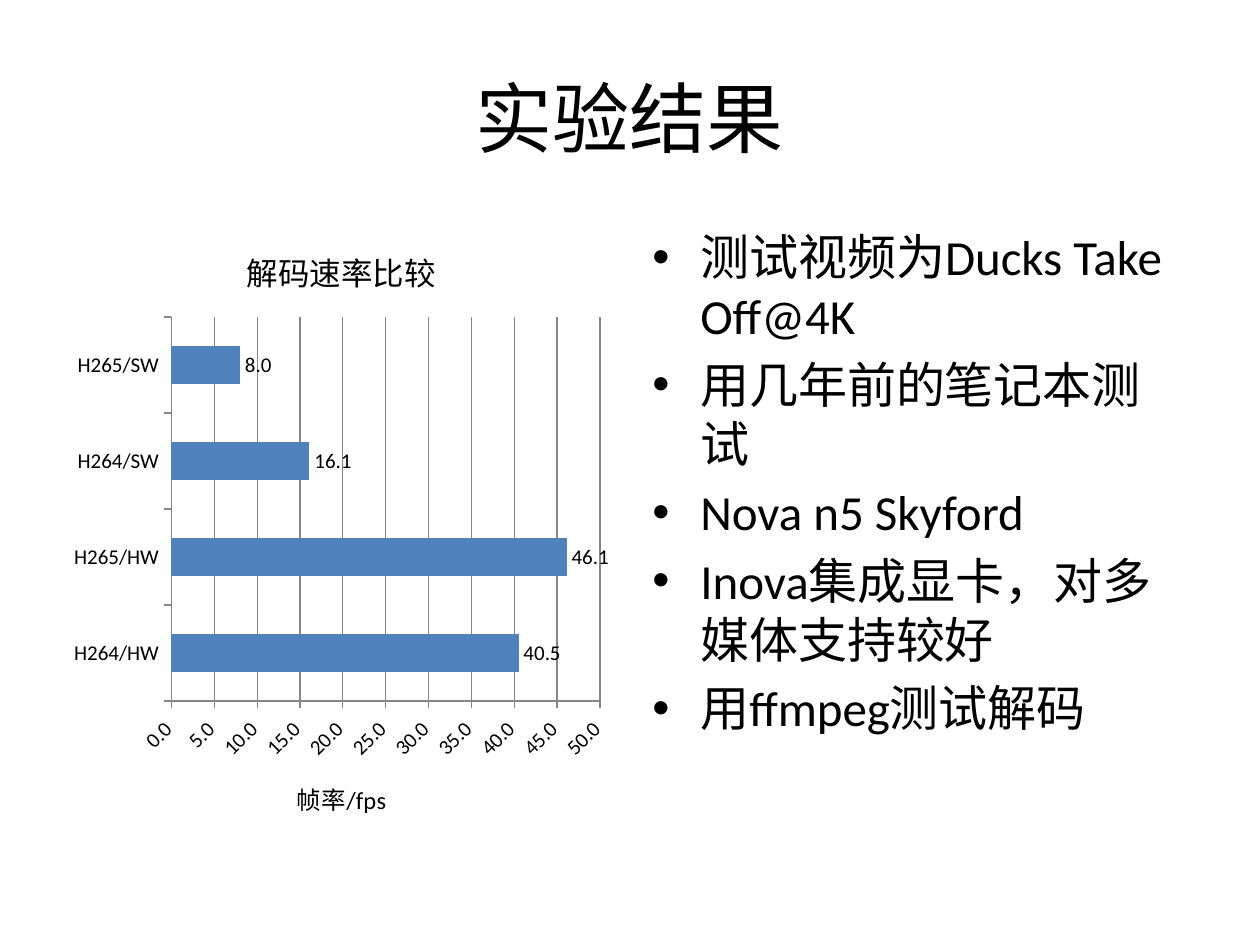
"""Build a slide comparing decoding speeds, with a bar chart and notes on the test."""
from lxml import etree
from pptx import Presentation, util as u
from pptx.chart.data import CategoryChartData
from pptx.dml.color import RGBColor
from pptx.enum import chart as ec, text as et
from pptx.oxml.ns import qn

HEAD = "实验结果"
NOTES = [
    "测试视频为Ducks Take Off@4K",
    "用几年前的笔记本测试",
    "Nova n5 Skyford",
    "Inova集成显卡，对多媒体支持较好",
    "用ffmpeg测试解码",
]
RATES = {"H264/HW": 40.5, "H265/HW": 46.1, "H264/SW": 16.1, "H265/SW": 8.0}
TITLE, UNIT = "解码速率比较", "帧率/fps"

FACE, FORM = "Calibri", "0.0_ "
BLACK = RGBColor(0x00, 0x00, 0x00)
BLUE = RGBColor(0x4F, 0x81, 0xBD)
GREY = RGBColor(0x86, 0x86, 0x86)

WIDE, HIGH = u.Inches(10), u.Inches(7.5)
EDGE = WIDE * 0.05
FULL = WIDE - 2 * EDGE
GAP = u.Inches(0.16)
COL = (FULL - GAP) / 2
TOP, TALL = u.Inches(1.75), HIGH * 0.66
DENT = u.Inches(0.38)


def put(item, **vals):
    for key, val in vals.items():
        setattr(item, key, val)


def style(font, size):
    put(font, name=FACE, size=u.Pt(size), bold=False)
    font.color.rgb = BLACK


def box(slide, rect, lines, size, anchor, **form):
    frame = slide.shapes.add_textbox(*map(int, rect)).text_frame
    put(frame, word_wrap=True, vertical_anchor=anchor)
    for i, line in enumerate(lines):
        para = frame.add_paragraph() if i else frame.paragraphs[0]
        put(para, **form)
        run = para.add_run()
        run.text = line
        style(run.font, size)
    return frame.paragraphs


def bullet(para):
    props = para._p.get_or_add_pPr()
    props.set("marL", str(DENT))
    props.set("indent", str(-DENT))
    etree.SubElement(props, qn("a:buFont")).set("typeface", "Arial")
    etree.SubElement(props, qn("a:buChar")).set("char", "•")


def label(owner, words, size):
    frame = owner.text_frame
    frame.text = words
    style(frame.paragraphs[0].runs[0].font, size)


def plot(slide, rect):
    data = CategoryChartData(number_format=FORM)
    data.categories = list(RATES)
    data.add_series("Series 1", list(RATES.values()))
    chart = slide.shapes.add_chart(
        ec.XL_CHART_TYPE.BAR_CLUSTERED, *map(int, rect), data).chart
    style(chart.font, 18)
    put(chart, has_legend=False, has_title=True)
    label(chart.chart_title, TITLE, 18)
    chart.chart_title.include_in_layout = False

    cat, val = chart.category_axis, chart.value_axis
    for axis in (cat, val):
        put(axis, major_tick_mark=ec.XL_TICK_MARK.OUTSIDE,
            minor_tick_mark=ec.XL_TICK_MARK.NONE)
        style(axis.tick_labels.font, 12)
        axis.format.line.color.rgb = GREY
    cat.has_major_gridlines = False
    put(val, has_major_gridlines=True, has_title=True)
    put(val.tick_labels, number_format=FORM, number_format_is_linked=False)
    val.major_gridlines.format.line.color.rgb = GREY
    label(val.axis_title, UNIT, 14)

    bars = chart.plots[0]
    put(bars, gap_width=150, vary_by_categories=False, has_data_labels=True)
    put(bars.data_labels, show_value=True, number_format=FORM,
        number_format_is_linked=False,
        position=ec.XL_LABEL_POSITION.OUTSIDE_END)
    style(bars.data_labels.font, 12)
    fill = bars.series[0].format.fill
    fill.solid()
    fill.fore_color.rgb = BLUE


def main():
    deck = Presentation()
    put(deck, slide_width=WIDE, slide_height=HIGH)
    slide = deck.slides.add_slide(deck.slide_layouts[6])
    box(slide, (EDGE, HIGH * 0.04, FULL, u.Inches(1.25)), [HEAD], 44,
        et.MSO_ANCHOR.MIDDLE, alignment=et.PP_ALIGN.CENTER)
    plot(slide, (EDGE, TOP, COL, TALL))
    paras = box(slide, (EDGE + COL + GAP, TOP, COL, TALL), NOTES, 28,
                et.MSO_ANCHOR.TOP, space_before=u.Pt(5.6))
    for para in paras:
        bullet(para)
    deck.save("out.pptx")


if __name__ == "__main__":
    main()
